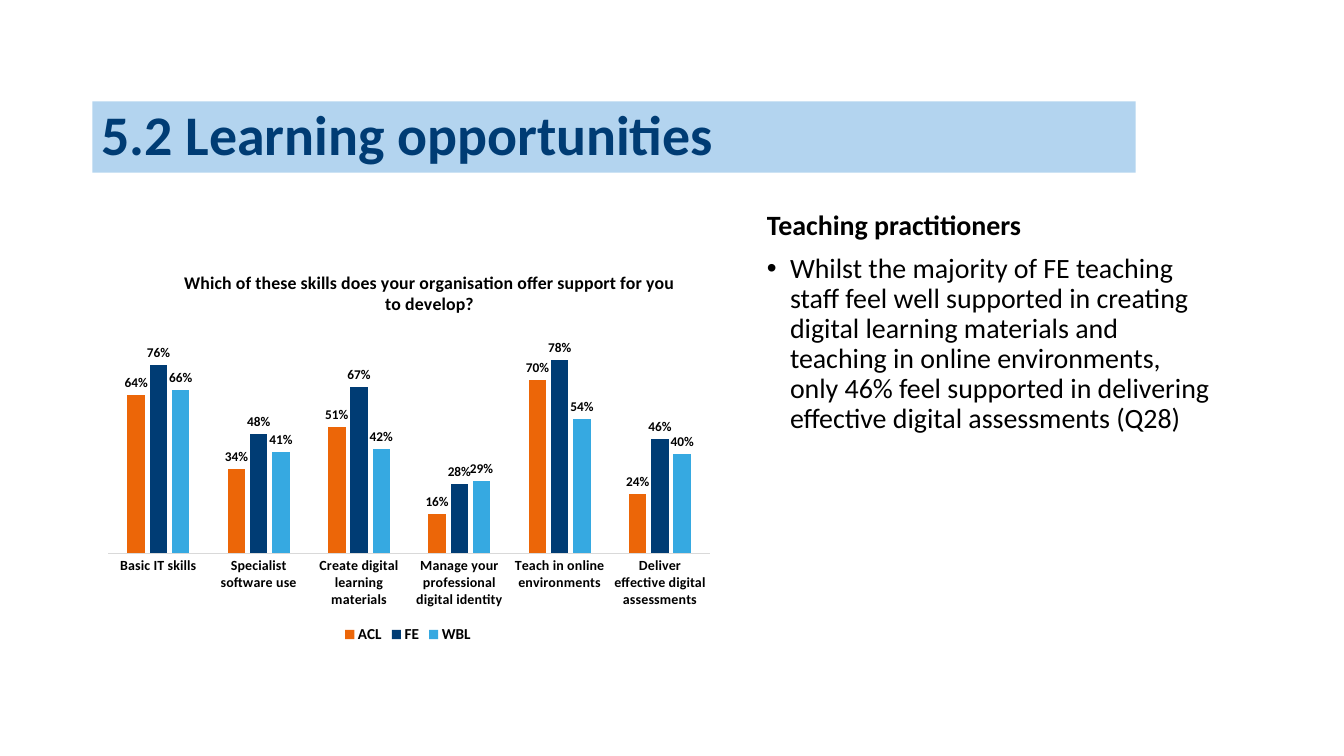
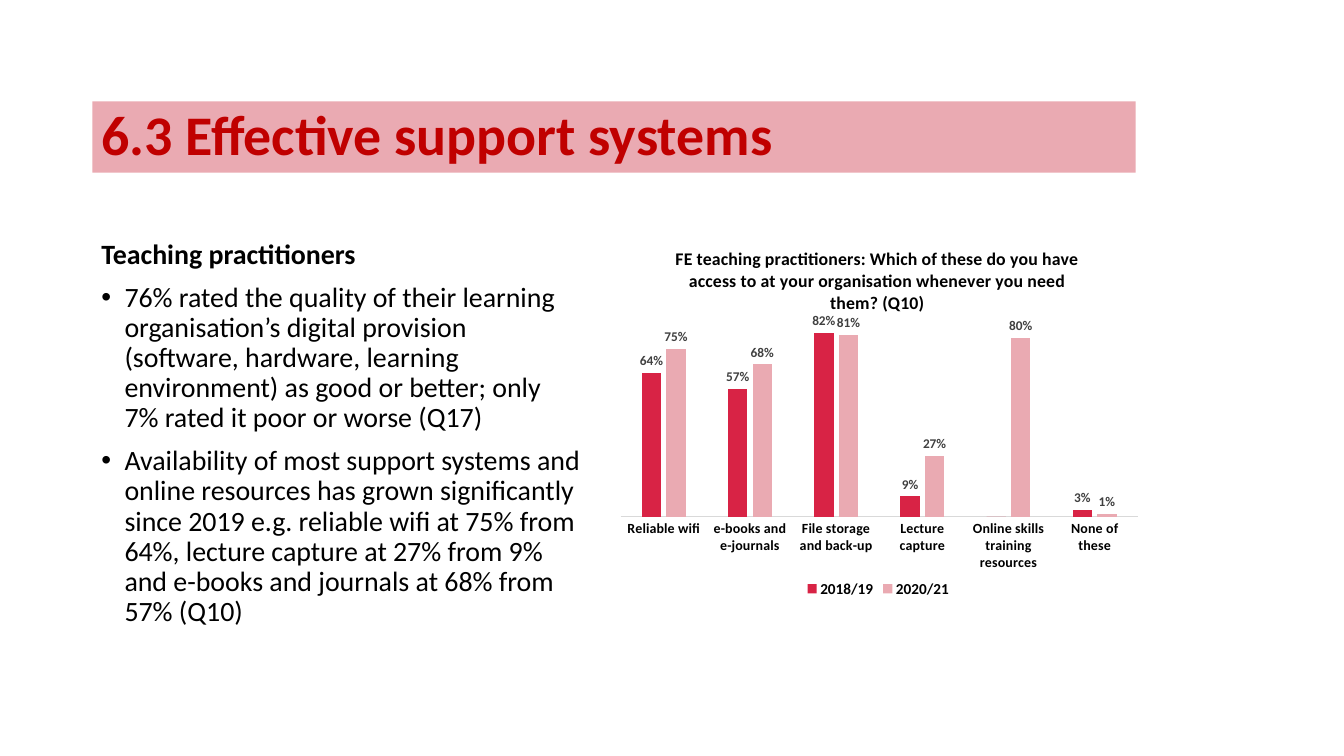
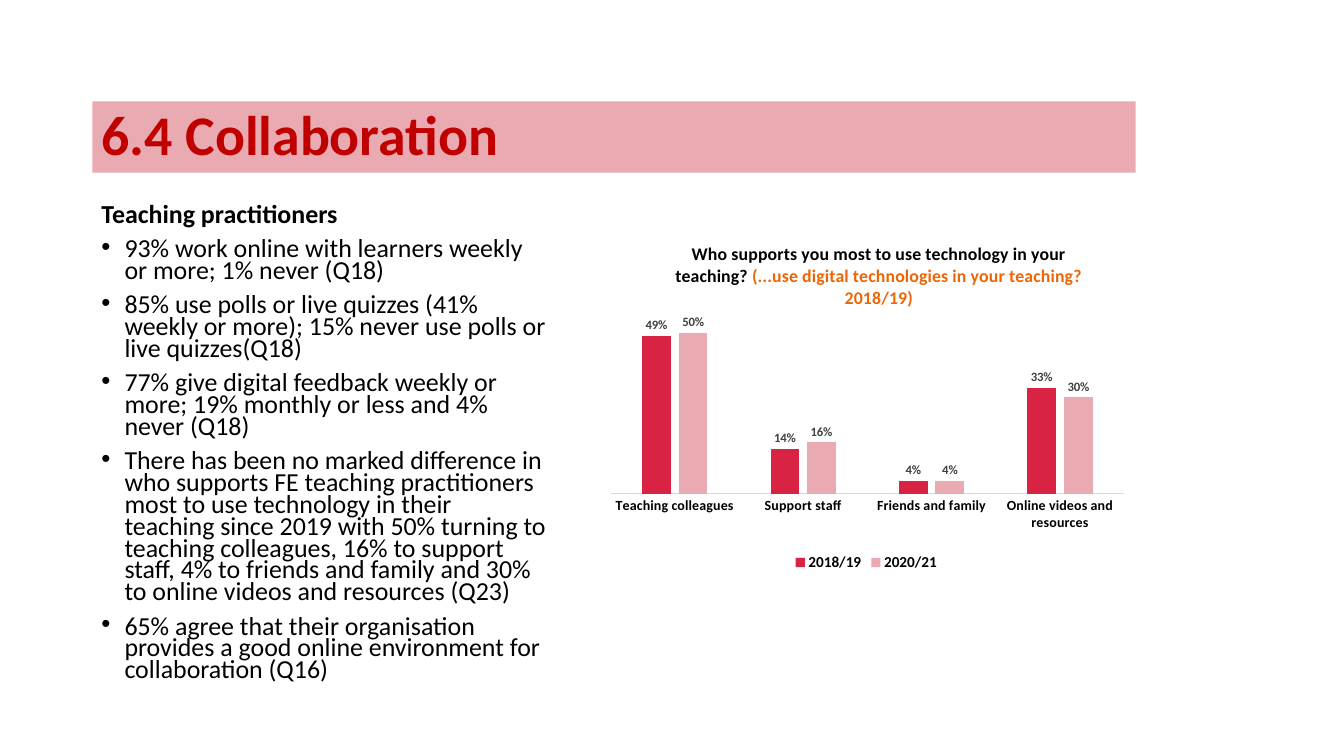
from dataclasses import dataclass

from lxml.etree import SubElement
from pptx import Presentation
from pptx.chart.data import CategoryChartData
from pptx.dml.color import RGBColor
from pptx.enum.chart import XL_CHART_TYPE, XL_LABEL_POSITION, XL_LEGEND_POSITION, XL_TICK_MARK
from pptx.enum.shapes import MSO_SHAPE
from pptx.enum.text import MSO_ANCHOR, PP_ALIGN
from pptx.oxml.ns import qn
from pptx.util import Cm, Pt


@dataclass(frozen=True)
class Theme:
    font: str = "Calibri"
    black: str = "000000"
    grey: str = "404040"
    axis: str = "D9D9D9"
    orange: str = "EC6608"
    navy: str = "003C74"
    sky: str = "36A9E1"
    pale_blue: str = "B3D4EF"
    dark_red: str = "C00000"
    crimson: str = "D82345"
    pink: str = "EAAAB2"
    heading: float = 44
    body: float = 22
    dense_body: float = 20.4
    chart_title: float = 14
    legend: float = 12
    category: float = 11
    value: float = 10.5
    small: float = 10


class Deck:
    """Builds the survey slides from one theme."""

    def __init__(self, theme):
        self.theme = theme
        self.presentation = Presentation()
        self.presentation.slide_width = Cm(37.34)
        self.presentation.slide_height = Cm(21)
        self.slide = None

    def style(self, font, size, color=None, bold=True):
        font.name, font.size, font.bold = self.theme.font, Pt(size), bold
        if color:
            font.color.rgb = RGBColor.from_string(color)

    def add_slide(self, heading, color, band_color):
        self.slide = self.presentation.slides.add_slide(self.presentation.slide_layouts[6])
        band = self.slide.shapes.add_shape(
            MSO_SHAPE.RECTANGLE, Cm(2.57), Cm(2.82), Cm(28.98), Cm(1.98))
        band.shadow.inherit = False
        band.fill.solid()
        band.fill.fore_color.rgb = RGBColor.from_string(band_color)
        band.line.fill.background()
        band.text_frame.vertical_anchor = MSO_ANCHOR.MIDDLE
        paragraph = band.text_frame.paragraphs[0]
        paragraph.text = heading
        paragraph.alignment = PP_ALIGN.LEFT
        paragraph.line_spacing = 0.9
        self.style(paragraph.font, self.theme.heading, color)

    def add_findings(self, box, audience, findings, size, spacing=0.9):
        frame = self.slide.shapes.add_textbox(*map(Cm, box)).text_frame
        frame.word_wrap = True
        for index, text in enumerate([audience, *findings]):
            paragraph = frame.add_paragraph() if index else frame.paragraphs[0]
            paragraph.text = text
            paragraph.line_spacing = spacing
            if index:
                paragraph.space_before = Pt(10)
                properties = paragraph._p.get_or_add_pPr()
                properties.set("marL", str(Cm(0.64)))
                properties.set("indent", str(Cm(-0.64)))
                SubElement(properties, qn("a:buFont"), typeface="Arial")
                SubElement(properties, qn("a:buChar"), char="•")
            self.style(paragraph.font, size, self.theme.black, bold=not index)

    def place(self, element, index, **settings):
        layout = element.find(qn("c:layout"))
        if layout is None:
            layout = SubElement(element, qn("c:layout"))
            element.insert(index, layout)
        manual = SubElement(layout, qn("c:manualLayout"))
        for name, value in settings.items():
            SubElement(manual, qn(f"c:{name}"), val=str(value))

    def add_chart(self, box, question, question_at, categories, series, top,
                  label_size, label_color):
        data = CategoryChartData(number_format="0%")
        data.categories = categories
        for name, values, _ in series:
            data.add_series(name, values)
        chart = self.slide.shapes.add_chart(
            XL_CHART_TYPE.COLUMN_CLUSTERED, *map(Cm, box), data).chart
        self.style(chart.font, self.theme.small, self.theme.black, bold=False)
        self.add_question(chart, question, question_at)
        self.style_axes(chart, top)
        chart.has_legend = True
        chart.legend.position = XL_LEGEND_POSITION.BOTTOM
        chart.legend.include_in_layout = False
        self.style(chart.legend.font, self.theme.legend, self.theme.black)
        self.place(chart._chartSpace.chart.plotArea, 0, layoutTarget="inner",
                   xMode="edge", yMode="edge", x=0.025, y=0.217, w=0.954, h=0.551)
        plot = chart.plots[0]
        plot.gap_width, plot.overlap, plot.vary_by_categories = 219, -27, False
        for columns, (_, values, color) in zip(plot.series, series):
            columns.format.fill.solid()
            columns.format.fill.fore_color.rgb = RGBColor.from_string(color)
            columns.invert_if_negative = False
            self.add_labels(columns, values, label_size, label_color)

    def add_question(self, chart, question, question_at):
        chart.has_title = True
        paragraph = chart.chart_title.text_frame.paragraphs[0]
        self.style(paragraph.font, self.theme.chart_title)
        for text, color in question:
            run = paragraph.add_run()
            run.text = text
            run.font.color.rgb = RGBColor.from_string(color)
        left, top = question_at
        self.place(chart.chart_title._element, 1, xMode="edge", yMode="edge", x=left, y=top)

    def style_axes(self, chart, top):
        values, names = chart.value_axis, chart.category_axis
        values.visible = values.has_major_gridlines = False
        values.minimum_scale, values.maximum_scale = 0, top
        names.major_tick_mark = XL_TICK_MARK.NONE
        names.format.line.color.rgb = RGBColor.from_string(self.theme.axis)
        names.format.line.width = Pt(0.75)
        self.style(names.tick_labels.font, self.theme.category, self.theme.black)

    def add_labels(self, columns, values, size, color):
        labels = columns.data_labels
        labels.show_value = True
        labels.number_format, labels.number_format_is_linked = "0%", False
        labels.position = XL_LABEL_POSITION.OUTSIDE_END
        self.style(labels.font, size, color)
        empty = [index for index, value in enumerate(values) if value == 0]
        for place, index in enumerate(empty):
            label = SubElement(labels._element, qn("c:dLbl"))
            SubElement(label, qn("c:idx"), val=str(index))
            SubElement(label, qn("c:delete"), val="1")
            labels._element.insert(place, label)

    def save(self):
        self.presentation.save("out.pptx")


def main():
    theme = Theme()
    deck = Deck(theme)
    audience = "Teaching practitioners"

    deck.add_slide("5.2 Learning opportunities", theme.navy, theme.pale_blue)
    deck.add_chart(
        (2.57, 6.73, 17.53, 11.25),
        [("Which of these skills does your organisation offer support for you to develop?",
          theme.black)],
        (0.14, 0.06),
        ["Basic IT skills", "Specialist software use", "Create digital learning materials",
         "Manage your professional digital identity", "Teach in online environments",
         "Deliver effective digital assessments"],
        [("ACL", (0.64, 0.34, 0.51, 0.16, 0.7, 0.24), theme.orange),
         ("FE", (0.76, 0.48, 0.67, 0.28, 0.78, 0.46), theme.navy),
         ("WBL", (0.66, 0.41, 0.42, 0.29, 0.54, 0.4), theme.sky)],
        0.9, theme.value, theme.black)
    deck.add_findings(
        (21.06, 5.74, 12.93, 12.83), audience,
        ["Whilst the majority of FE teaching staff feel well supported in creating digital "
         "learning materials and teaching in online environments, only 46% feel supported in "
         "delivering effective digital assessments (Q28)"],
        theme.body)

    deck.add_slide("6.3 Effective support systems", theme.dark_red, theme.pink)
    deck.add_findings(
        (2.57, 6.55, 13.82, 11.86), audience,
        ["76% rated the quality of their learning organisation’s digital provision (software, "
         "hardware, learning environment) as good or better; only 7% rated it poor or worse (Q17)",
         "Availability of most support systems and online resources has grown significantly "
         "since 2019 e.g. reliable wifi at 75% from 64%, lecture capture at 27% from 9% and "
         "e-books and journals at 68% from 57% (Q10)"],
        theme.body)
    deck.add_chart(
        (16.87, 6.55, 15.06, 10.16),
        [("FE teaching practitioners: Which of these do you have access to at your "
          "organisation whenever you need them? (Q10)", theme.black)],
        (0.12, 0.02),
        ["Reliable wifi", "e-books and e-journals", "File storage and back-up",
         "Lecture capture", "Online skills training resources", "None of these"],
        [("2018/19", (0.64, 0.57, 0.82, 0.09, 0, 0.03), theme.crimson),
         ("2020/21", (0.75, 0.68, 0.81, 0.27, 0.8, 0.01), theme.pink)],
        0.9, theme.value, theme.grey)

    deck.add_slide("6.4 Collaboration", theme.dark_red, theme.pink)
    deck.add_findings(
        (2.57, 5.59, 12.88, 13.36), audience,
        ["93% work online with learners weekly or more; 1% never (Q18)",
         "85% use polls or live quizzes (41% weekly or more); 15% never use polls or live "
         "quizzes(Q18)",
         "77% give digital feedback weekly or more; 19% monthly or less and 4% never (Q18)",
         "There has been no marked difference in who supports FE teaching practitioners most "
         "to use technology in their teaching since 2019 with 50% turning to teaching "
         "colleagues, 16% to support staff, 4% to friends and family and 30% to online videos "
         "and resources (Q23)",
         "65% agree that their organisation provides a good online environment for "
         "collaboration (Q16)"],
        theme.dense_body, 0.7)
    deck.add_chart(
        (16.59, 6.25, 14.96, 9.73),
        [("Who supports you most to use technology in your teaching? ", theme.black),
         ("(...use digital technologies in your teaching? 2018/19)", theme.orange)],
        (0.14, 0.04),
        ["Teaching colleagues", "Support staff", "Friends and family",
         "Online videos and resources"],
        [("2018/19", (0.49, 0.14, 0.04, 0.33), theme.crimson),
         ("2020/21", (0.5, 0.16, 0.04, 0.3), theme.pink)],
        0.6, theme.small, theme.grey)

    deck.save()


if __name__ == "__main__":
    main()
